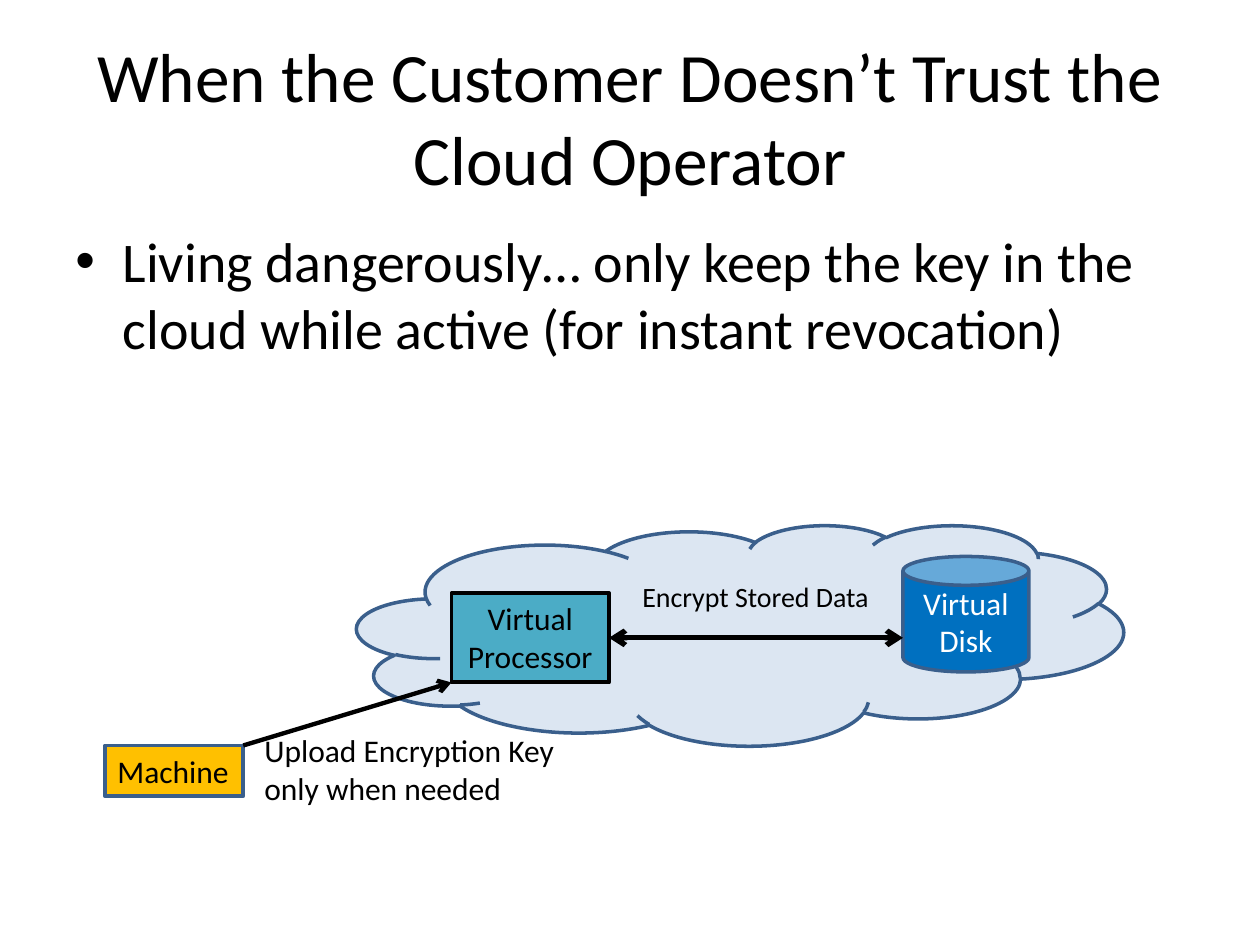
import pptx
import pptx.util
import pptx.dml.color
import pptx.enum.shapes
import pptx.enum.text
import pptx.oxml
import pptx.oxml.ns

Pt = pptx.util.Pt
KIND = pptx.enum.shapes.MSO_SHAPE
ALIGN = pptx.enum.text.PP_ALIGN
ANCHOR = pptx.enum.text.MSO_ANCHOR
FIT = pptx.enum.text.MSO_AUTO_SIZE
BLACK, WHITE, EDGE = "000000", "FFFFFF", "3A5F8C"


def color(code):
    return pptx.dml.color.RGBColor.from_string(code)


def element(tag, **attrs):
    node = pptx.oxml.parse_xml(f"<a:{tag} {pptx.oxml.ns.nsdecls('a')}/>")
    for key, value in attrs.items():
        node.set(key, value)
    return node


def write(shape, lines, size=18, ink=BLACK, align=ALIGN.LEFT,
          anchor=ANCHOR.TOP, wrap=True, grow=False):
    frame = shape.text_frame
    frame.word_wrap = wrap
    frame.vertical_anchor = anchor
    frame.auto_size = FIT.SHAPE_TO_FIT_TEXT if grow else FIT.NONE
    for i, line in enumerate(lines):
        para = frame.paragraphs[0] if i == 0 else frame.add_paragraph()
        para.alignment = align
        run = para.add_run()
        run.text = line
        run.font.name = "Calibri"
        run.font.size = Pt(size)
        run.font.color.rgb = color(ink)
    return frame


def label(slide, box, line, size=18, **style):
    shape = slide.shapes.add_textbox(*map(Pt, box))
    return write(shape, [line], size, **style)


def bullet(para, indent):
    props = para._p.get_or_add_pPr()
    props.set("marL", str(Pt(indent)))
    props.set("indent", str(-Pt(indent)))
    props.append(element("buFont", typeface="Arial"))
    props.append(element("buChar", char="•"))


def block(slide, kind, box, fill, edge=EDGE, width=2):
    shape = slide.shapes.add_shape(kind, *map(Pt, box))
    shape.shadow.inherit = False
    shape.fill.solid()
    shape.fill.fore_color.rgb = color(fill)
    shape.line.color.rgb = color(edge)
    shape.line.width = Pt(width)
    return shape


def arrow(slide, start, end, width, both=False):
    line = slide.shapes.add_connector(
        pptx.enum.shapes.MSO_CONNECTOR.STRAIGHT, *map(Pt, start + end))
    line.line.color.rgb = color(BLACK)
    line.line.width = Pt(width)
    ends = ["headEnd", "tailEnd"] if both else ["tailEnd"]
    for tag in ends:
        line.line._get_or_add_ln().append(element(tag, type="arrow"))
    line._element.spPr.append(element("effectLst"))
    return line


def main():
    deck = pptx.Presentation()
    deck.slide_width, deck.slide_height = Pt(720), Pt(540)
    slide = deck.slides.add_slide(deck.slide_layouts[6])

    # Title and bullet
    label(slide, (36, 21.6, 648, 90),
          "When the Customer Doesn’t Trust the Cloud Operator",
          39.6, align=ALIGN.CENTER, anchor=ANCHOR.MIDDLE)
    body = label(slide, (36, 126, 648, 356.4),
                 "Living dangerously… only keep the key in the cloud "
                 "while active (for instant revocation)", 32)
    body.paragraphs[0].space_before = Pt(6.4)
    bullet(body.paragraphs[0], 27)

    # Cloud with its disk and processor
    block(slide, KIND.CLOUD, (204, 300, 438, 126), "DCE6F2")
    disk = block(slide, KIND.CAN, (516, 318, 72, 66), "0070C0")
    write(disk, ["Virtual", "Disk"], ink=WHITE,
          align=ALIGN.CENTER, anchor=ANCHOR.MIDDLE)
    chip = block(slide, KIND.RECTANGLE, (258, 339, 90, 51),
                 "4BACC6", BLACK, 2.25)
    write(chip, ["Virtual", "Processor"], align=ALIGN.CENTER, grow=True)
    label(slide, (360, 327.6, 150, 26.6), "Encrypt Stored Data", 16, grow=True)
    link = arrow(slide, (348, 364.5), (516, 364.5), 3, both=True)
    link.begin_connect(chip, 3)

    # Customer machine and key upload
    host = block(slide, KIND.RECTANGLE, (60, 426, 79, 29),
                 "FFC000", width=2.25)
    write(host, ["Machine"], wrap=False, grow=True)
    label(slide, (144, 414, 186, 51),
          "Upload Encryption Key only when needed", grow=True)
    arrow(slide, (139, 426), (258, 390), 2.5)

    deck.save("out.pptx")


if __name__ == "__main__":
    main()
